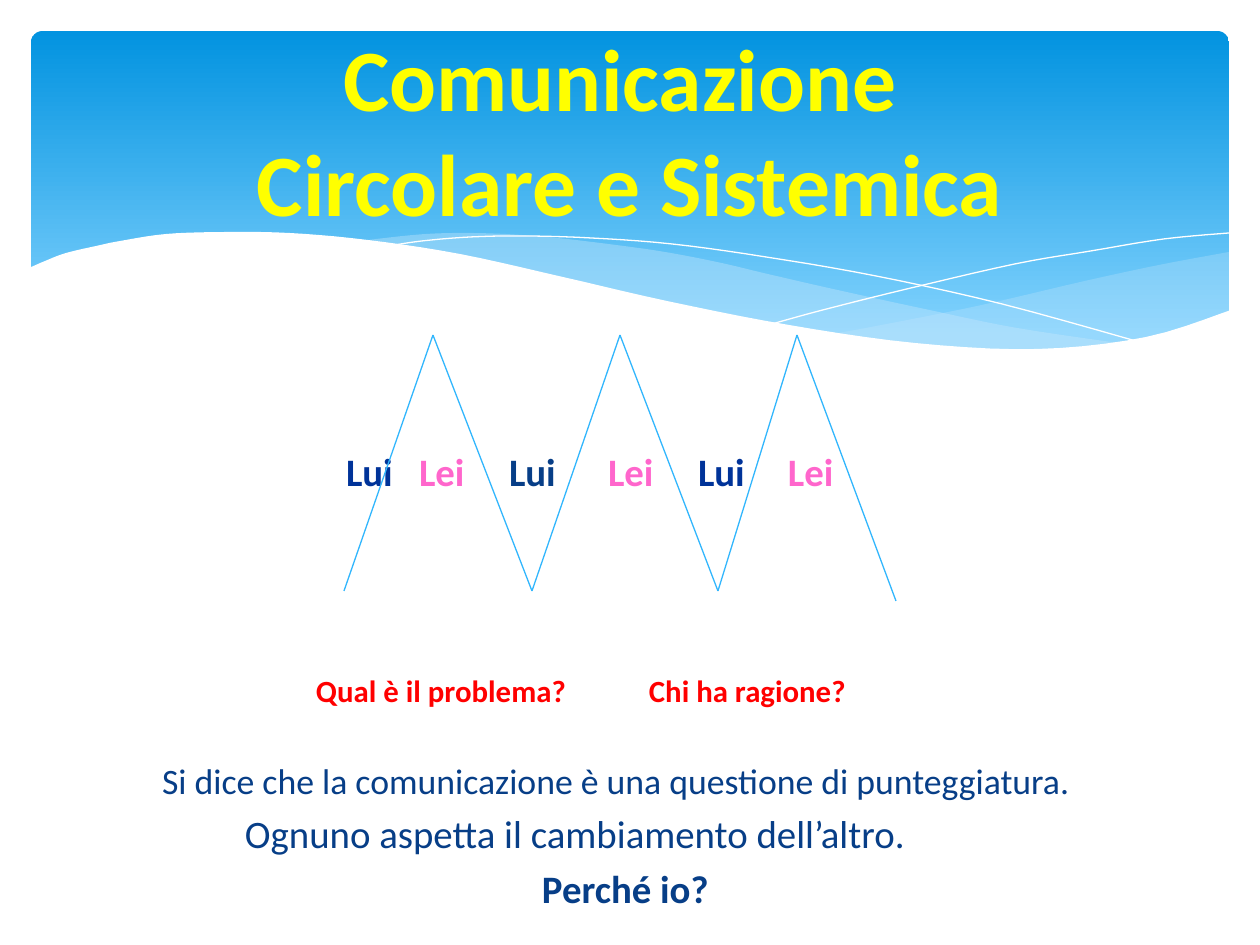
from itertools import pairwise

from lxml import etree
from pptx import Presentation
from pptx import util as u
from pptx.dml import color as col
from pptx.enum import shapes as sh, text as tx
from pptx.oxml import ns

SCALE = 914400 / 126
BLUE, NAVY, PINK, RED = "073E87", "003399", "FF66CC", "FF0000"

RIGHT_TOP = [(1229, 252), (1159, 265), (1085, 281), (982, 305), (887, 324), (833, 334)]
RIGHT_LOW = [(833, 334), (888, 342), (954, 348), (1024, 350), (1088, 348),
             (1140, 340), (1187, 327), (1229, 311)]
MID_TOP = [(1125, 344), (1017, 328), (934, 311), (842, 291), (772, 275), (717, 262),
           (665, 252), (616, 245), (557, 238), (505, 234), (455, 233), (413, 235), (360, 241)]
MID_LOW = [(360, 241), (431, 251), (512, 266), (566, 280), (668, 302), (757, 321),
           (838, 335), (910, 345), (974, 349), (1043, 350), (1103, 347), (1125, 344)]
LONG_LINE = [(389, 246), (422, 241), (471, 237), (524, 236), (591, 238), (672, 244),
             (766, 257), (876, 276), (1002, 304), (1143, 343)]
SHORT_LINE = [(772, 324), (823, 310), (907, 289), (1015, 264), (1091, 251),
              (1164, 239), (1229, 233)]
FRONT = [(1231, 310), (1146, 337), (1037, 349), (915, 343), (789, 325), (667, 301),
         (563, 277), (460, 254), (368, 240), (290, 233), (223, 232), (166, 234),
         (120, 241), (96, 246), (66, 253), (45, 261), (29, 268)]
ZIGZAG = [(0, 256), (89, 0), (188, 256), (276, 0), (374, 256), (453, 0), (552, 266)]


def px(n):
    """Turn px into EMU."""
    return u.Emu(round(n * SCALE))


def rgb(code):
    """Turn a hex string into a colour."""
    return col.RGBColor.from_string(code)


def smooth(knots, steps=5):
    """Return points on a smooth curve through the knots."""
    ends = [knots[0], *knots, knots[-1]]
    out = [knots[0]]
    for a, b, c, d in zip(ends, ends[1:], ends[2:], ends[3:]):
        for i in range(1, steps + 1):
            t = i / steps
            out.append(tuple(
                q + t * (r - p) / 2 + t**2 * (2 * p - 5 * q + 4 * r - s) / 2
                + t**3 * (3 * q - p - 3 * r + s) / 2
                for p, q, r, s in zip(a, b, c, d)))
    return out


def trace(slide, points, close):
    """Draw a freeform through points given in px."""
    first, *rest = [(px(x), px(y)) for x, y in points]
    pen = slide.shapes.build_freeform(*first, scale=1.0)
    pen.add_line_segments(rest, close=close)
    form = pen.convert_to_shape()
    form.shadow.inherit = False
    return form


def add_wave(slide, points, code, alpha=100):
    """Add a filled wave without outline."""
    wave = trace(slide, points, True)
    wave.fill.solid()
    wave.fill.fore_color.rgb = rgb(code)
    wave.line.fill.background()
    if alpha < 100:
        clr = wave.fill._xPr.find(".//" + ns.qn("a:srgbClr"))
        etree.SubElement(clr, ns.qn("a:alpha"), val=str(alpha * 1000))


def add_curve(slide, points):
    """Add a white hairline curve."""
    curve = trace(slide, points, False)
    curve.fill.background()
    curve.line.color.rgb = rgb("FFFFFF")
    curve.line.width = u.Pt(0)


def add_text(slide, box, runs, size, bold=True, align=tx.PP_ALIGN.LEFT):
    """Add one vertically centred paragraph; a run of None breaks the line."""
    frame = slide.shapes.add_textbox(*map(px, box)).text_frame
    frame.word_wrap = True
    frame.vertical_anchor = tx.MSO_ANCHOR.MIDDLE
    frame.margin_left = frame.margin_right = frame.margin_top = frame.margin_bottom = 0
    para = frame.paragraphs[0]
    para.alignment = align
    for words, code in runs:
        if words is None:
            para.add_line_break()
            continue
        run = para.add_run()
        run.text = words
        font = run.font
        font.name, font.size, font.bold = "Calibri", u.Pt(size), bold
        font.color.rgb = rgb(code)


def add_header(slide, box):
    """Add the gradient panel, its waves and the title."""
    x, y, w, h = box
    panel = slide.shapes.add_shape(sh.MSO_SHAPE.ROUNDED_RECTANGLE, *map(px, box))
    panel.adjustments[0] = 0.034
    panel.shadow.inherit = False
    panel.line.fill.background()
    panel.fill.gradient()
    panel.fill.gradient_angle = 270
    for stop, place, code in zip(panel.fill.gradient_stops, (0, 0.9), ("0293E0", "83D3FE")):
        stop.position = place
        stop.color.rgb = rgb(code)
    add_wave(slide, smooth(RIGHT_TOP) + smooth(RIGHT_LOW), "C6E7FC", 29)
    add_wave(slide, smooth(MID_TOP) + smooth(MID_LOW), "C6E7FC", 40)
    add_curve(slide, smooth(LONG_LINE))
    add_curve(slide, smooth(SHORT_LINE))
    base = y + h + 43
    add_wave(slide, smooth(FRONT) + [(x - 2, base), (x + w + 2, base)], "FFFFFF")
    title = [("Comunicazione ", "FFFF00"), (None, None), ("Circolare e Sistemica", "FFFF00")]
    add_text(slide, (x + 32, y + 18, w - 64, 160), title, 50, align=tx.PP_ALIGN.CENTER)


def add_zigzag(slide, box):
    """Add the him and her labels with the zigzag over them."""
    x, y, w, h = box
    codes = (NAVY, PINK, BLUE, PINK, NAVY, PINK)
    for i, (left, code) in enumerate(zip((2, 75, 165, 264, 354, 444), codes)):
        word = "Lei" if i % 2 else "Lui"
        add_text(slide, (x + left, y + 112, 70, 48), [(word, code)], 22.2)
    for (ax, ay), (bx, by) in pairwise(ZIGZAG):
        line = slide.shapes.add_connector(
            sh.MSO_CONNECTOR.STRAIGHT, px(x + ax), px(y + ay), px(x + bx), px(y + by))
        line.line.color.rgb = rgb("31B6FD")
        line.line.width = u.Pt(0.75)
        etree.SubElement(line._element.spPr, ns.qn("a:effectLst"))


def add_notes(slide, box):
    """Add the questions and the closing lines."""
    x, y, w, h = box
    rows = [
        (154, 0, "Qual è il problema?", RED, 17.6, True),
        (487, 0, "Chi ha ragione?", RED, 17.6, True),
        (0, 90, "Si dice che la comunicazione è una questione di punteggiatura.", BLUE, 20.4, False),
        (83, 143, "Ognuno aspetta il cambiamento dell’altro.", BLUE, 22.2, False),
        (380, 198, "Perché io?", BLUE, 22.2, True),
    ]
    for left, top, words, code, size, bold in rows:
        add_text(slide, (x + left, y + top, w - left, 48), [(words, code)], size, bold)


def main():
    """Build and save the slide."""
    deck = Presentation()
    deck.slide_width, deck.slide_height = px(1260), px(945)
    slide = deck.slides.add_slide(deck.slide_layouts[6])
    add_header(slide, (31, 31, 1198, 340))
    add_zigzag(slide, (344, 335, 552, 266))
    add_notes(slide, (162, 666, 990, 246))
    deck.save("out.pptx")


if __name__ == "__main__":
    main()
